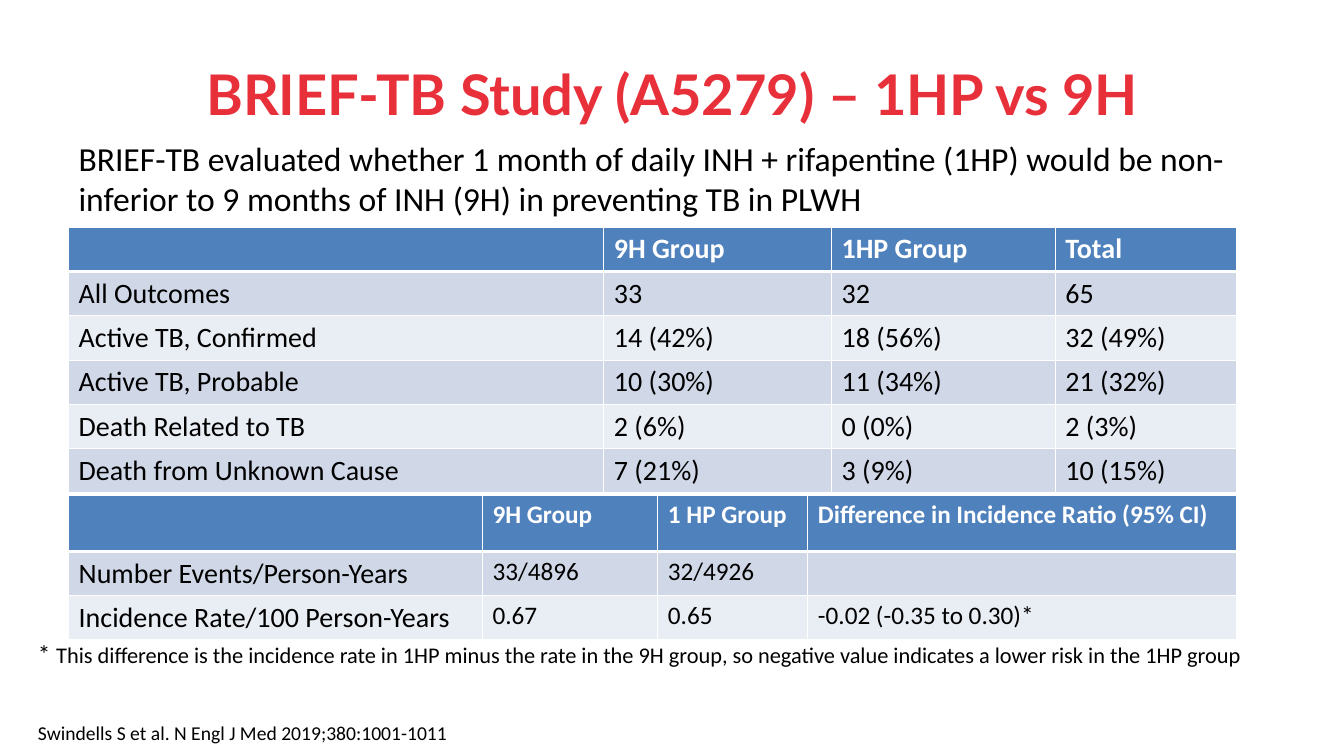
from pptx import Presentation, util as u
from pptx.dml import color
from pptx.enum import text
from pptx.oxml import parse_xml
from pptx.oxml import ns

BLACK, WHITE, RED = "000000", "FFFFFF", "E8303B"
HEADER, BANDS = "4F81BD", ("D0D8E8", "E9EDF4")

OUTCOMES = [
    ["", "9H Group", "1HP Group", "Total"],
    ["All Outcomes", "33", "32", "65"],
    ["Active TB, Confirmed", "14 (42%)", "18 (56%)", "32 (49%)"],
    ["Active TB, Probable", "10 (30%)", "11 (34%)", "21 (32%)"],
    ["Death Related to TB", "2 (6%)", "0 (0%)", "2 (3%)"],
    ["Death from Unknown Cause", "7 (21%)", "3 (9%)", "10 (15%)"],
]
INCIDENCE = [
    ["", "9H Group", "1 HP Group", "Difference in Incidence Ratio (95% CI)"],
    ["Number Events/Person-Years", "33/4896", "32/4926", ""],
    ["Incidence Rate/100 Person-Years", "0.67", "0.65", "-0.02 (-0.35 to 0.30)*"],
]


def rgb(hex_code):
    """Turn a hex string into a colour."""
    return color.RGBColor.from_string(hex_code)


def style(font, size, hex_code=BLACK, bold=False, face="Calibri"):
    """Set the look of a font."""
    font.name, font.size, font.bold = face, u.Pt(size), bold
    font.color.rgb = rgb(hex_code)


def add_passage(slide, box, pieces, hex_code=BLACK, bold=False, face="Calibri",
                align=text.PP_ALIGN.LEFT, anchor=text.MSO_ANCHOR.TOP):
    """Place one paragraph made of (wording, size) pieces in the box."""
    frame = slide.shapes.add_textbox(*map(u.Pt, box)).text_frame
    frame.word_wrap = True
    frame.vertical_anchor = anchor
    paragraph = frame.paragraphs[0]
    paragraph.alignment = align
    for wording, size in pieces:
        run = paragraph.add_run()
        run.text = wording
        style(run.font, size, hex_code, bold, face)


def add_borders(cell, top, bottom):
    """Draw white cell borders, with the given top and bottom widths."""
    properties = cell._tc.get_or_add_tcPr()
    for side, width in zip("LRTB", (1, 1, top, bottom)):
        properties.append(parse_xml(
            f'<a:ln{side} {ns.nsdecls("a")} w="{u.Pt(width)}"><a:solidFill>'
            f'<a:srgbClr val="{WHITE}"/></a:solidFill></a:ln{side}>'))


def add_results(slide, box, rows, widths, header_height, row_height, value_size):
    """Place a banded results table in the box."""
    table = slide.shapes.add_table(len(rows), len(widths), *map(u.Pt, box)).table
    for column, width in zip(table.columns, widths):
        column.width = u.Pt(width)
    for r, row in enumerate(rows):
        is_header = r == 0
        table.rows[r].height = u.Pt(header_height if is_header else row_height)
        for c, value in enumerate(row):
            cell = table.cell(r, c)
            add_borders(cell, 3 if r == 1 else 1, 3 if is_header else 1)
            cell.fill.solid()
            cell.fill.fore_color.rgb = rgb(HEADER if is_header else BANDS[(r - 1) % 2])
            cell.text_frame.text = value
            size = 20 if c == 0 and not is_header else value_size
            style(cell.text_frame.paragraphs[0].font, size,
                  WHITE if is_header else BLACK, is_header)
            for run in cell.text_frame.paragraphs[0].runs:
                style(run.font, size, WHITE if is_header else BLACK, is_header)


def build_study_slide(slide, width, height):
    """Lay out the heading, both tables and the notes on the slide."""
    left, body_width, note_left = 49, 834.5, 20
    add_passage(slide, (48, 21.6, width - 96, 90),
                [("BRIEF-TB Study (A5279) – 1HP vs 9H", 40)], RED, True, "Lato",
                text.PP_ALIGN.CENTER, text.MSO_ANCHOR.MIDDLE)
    add_results(slide, (left, 162.3, body_width, 190), OUTCOMES,
                (382.3, 162.7, 159.9, 129.6), 31.65, 31.65, 20)
    add_results(slide, (left, 353.5, body_width, 103.5), INCIDENCE,
                (295.6, 125.3, 107.2, 306.4), 40.4, 31.65, 18)
    add_passage(slide, (note_left, 452.2, 891.4, 29), [
        ("* ", 18),
        ("This difference is the incidence rate in 1HP minus the rate in the 9H group, "
         "so negative value indicates a lower risk in the 1HP group", 16)])
    add_passage(slide, (note_left, height - 28.8, 386.6, 24.5),
                [("Swindells S et al. N Engl J Med 2019;380:1001-1011", 14)])
    add_passage(slide, (left, 95, body_width, 65.5), [
        ("BRIEF-TB evaluated whether 1 month of daily INH + rifapentine (1HP) would be "
         "non-inferior to 9 months of INH (9H) in preventing TB in PLWH", 24)])


def main():
    """Build and save the presentation."""
    deck = Presentation()
    width, height = 960, 540
    deck.slide_width, deck.slide_height = u.Pt(width), u.Pt(height)
    build_study_slide(deck.slides.add_slide(deck.slide_layouts[6]), width, height)
    deck.save("out.pptx")


if __name__ == "__main__":
    main()
